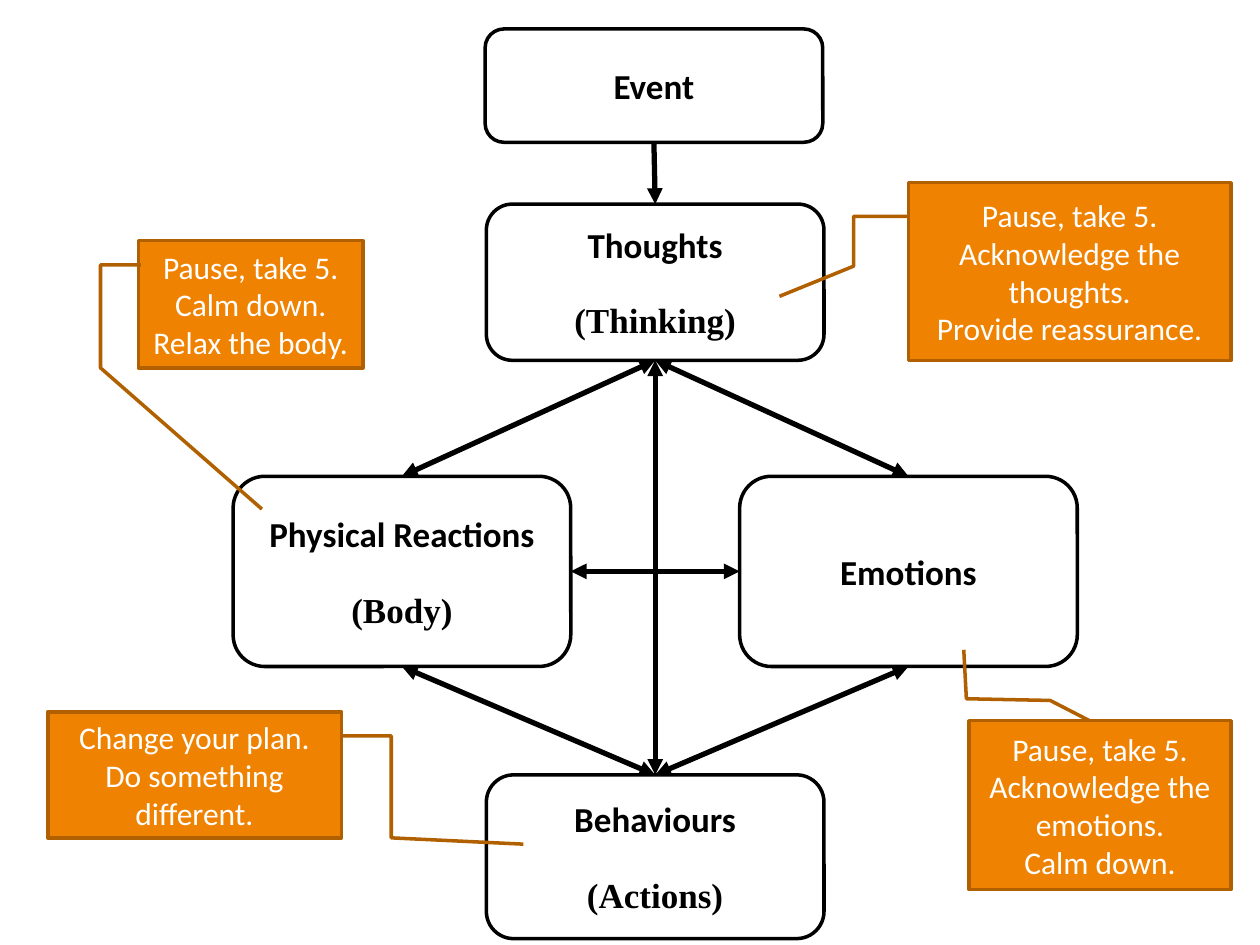
from lxml import etree
from pptx import Presentation
from pptx.dml.color import RGBColor
from pptx.enum.shapes import MSO_CONNECTOR as CONN, MSO_SHAPE as SHAPE
from pptx.enum.text import MSO_ANCHOR as ANCHOR, PP_ALIGN as ALIGN
from pptx.oxml.ns import qn
from pptx.util import Inches, Pt

THEME = {
    "ink": RGBColor(0, 0, 0),
    "callout_fill": RGBColor(0xEF, 0x82, 0x00),
    "callout_line": RGBColor(0xB1, 0x60, 0x00),
    "callout_text": RGBColor(0xFF, 0xFF, 0xFF),
    "font": "Calibri",
    "note_font": "Times New Roman",
    "stage_size": Pt(20),
    "callout_size": Pt(18),
    "note_gap": Pt(19.2),
    "outline": Pt(2),
    "arrow": Pt(3),
}
STAGE_W = 2.68
TOP, LEFT, BOTTOM, RIGHT = range(4)

STAGES = {
    "event": (3.85, 0.23, 0.9, ["Event"]),
    "thoughts": (3.86, 1.62, 1.24, ["Thoughts", "(Thinking)"]),
    "emotions": (5.87, 3.78, 1.51, ["Emotions"]),
    "body": (1.85, 3.78, 1.51, ["Physical Reactions", "(Body)"]),
    "behaviours": (3.86, 6.15, 1.3, ["Behaviours", "(Actions)"]),
}
ARROWS = [
    ("event", BOTTOM, "thoughts", TOP, ["tailEnd"]),
    *[(*ends, ["headEnd", "tailEnd"]) for ends in [
        ("thoughts", BOTTOM, "emotions", TOP),
        ("emotions", BOTTOM, "behaviours", TOP),
        ("body", BOTTOM, "behaviours", TOP),
        ("thoughts", BOTTOM, "body", TOP),
        ("thoughts", BOTTOM, "behaviours", TOP),
        ("body", RIGHT, "emotions", LEFT),
    ]],
]
CALLOUTS = [
    ((1.1, 1.91, 1.78, 1.01), False, (0.19, 0.01, 0.19, -0.17, 1, -0.17, 2.11, 0.55),
     ["Pause, take 5.", "Calm down.", "Relax the body."]),
    ((7.21, 1.45, 2.56, 1.41), False, (0.19, 0, 0.19, -0.17, 0.47, -0.17, 0.64, -0.4),
     ["Pause, take 5.", "Acknowledge the thoughts.", "Provide reassurance."]),
    ((0.38, 5.65, 2.33, 1), True, (0.19, 0, 0.19, -0.17, 1, -0.17, 1.05, -0.62),
     ["Change your plan.", "Do something different."]),
    ((7.69, 5.72, 2.08, 1.34), False, (0, 0.46, -0.12, 0.31, -0.13, -0.01, -0.42, -0.02),
     ["Pause, take 5.", "Acknowledge the emotions.", "Calm down."]),
]


def add_box(s, kind, box, line_color):
    sp = s.shapes.add_shape(kind, *map(Inches, box))
    sp.shadow.inherit = False
    sp.line.color.rgb = line_color
    sp.line.width = THEME["outline"]
    sp.text_frame.word_wrap = True
    sp.text_frame.vertical_anchor = ANCHOR.MIDDLE
    return sp


def write_lines(tf, lines, fonts, size, color, bold=False, gap=Pt(0)):
    for i, (text, font) in enumerate(zip(lines, fonts)):
        p = tf.add_paragraph() if i else tf.paragraphs[0]
        p.alignment = ALIGN.CENTER
        if i:
            p.space_before = gap
        r = p.add_run()
        r.text = text
        r.font.name, r.font.size, r.font.bold = font, size, bold
        r.font.color.rgb = color


def add_stage(s, x, y, h, lines):
    sp = add_box(s, SHAPE.ROUNDED_RECTANGLE, (x, y, STAGE_W, h), THEME["ink"])
    sp.fill.background()
    write_lines(sp.text_frame, lines, [THEME["font"], THEME["note_font"]],
                THEME["stage_size"], THEME["ink"], True, THEME["note_gap"])
    return sp


def add_arrow(s, start, start_side, end, end_side, heads):
    c = s.shapes.add_connector(CONN.STRAIGHT, 0, 0, 0, 0)
    c.begin_connect(start, start_side)
    c.end_connect(end, end_side)
    c.line.color.rgb = THEME["ink"]
    c.line.width = THEME["arrow"]
    ln = c.line._get_or_add_ln()
    for head in heads:
        etree.SubElement(ln, qn(f"a:{head}"), type="triangle")
    etree.SubElement(c._element.spPr, qn("a:effectLst"))


def add_callout(s, box, flipped, pointer, lines):
    sp = add_box(s, SHAPE.LINE_CALLOUT_3, box, THEME["callout_line"])
    sp.fill.solid()
    sp.fill.fore_color.rgb = THEME["callout_fill"]
    for i, value in enumerate(pointer):
        sp.adjustments[i] = value
    if flipped:
        sp._element.spPr.xfrm.set("flipH", "1")
    write_lines(sp.text_frame, lines, [THEME["font"]] * len(lines),
                THEME["callout_size"], THEME["callout_text"])


def main():
    prs = Presentation()
    prs.slide_width, prs.slide_height = Inches(10), Inches(7.5)
    s = prs.slides.add_slide(prs.slide_layouts[6])
    stages = {name: add_stage(s, *stage) for name, stage in STAGES.items()}
    for start, start_side, end, end_side, heads in ARROWS:
        add_arrow(s, stages[start], start_side, stages[end], end_side, heads)
    for callout in CALLOUTS:
        add_callout(s, *callout)
    prs.save("out.pptx")


if __name__ == "__main__":
    main()
